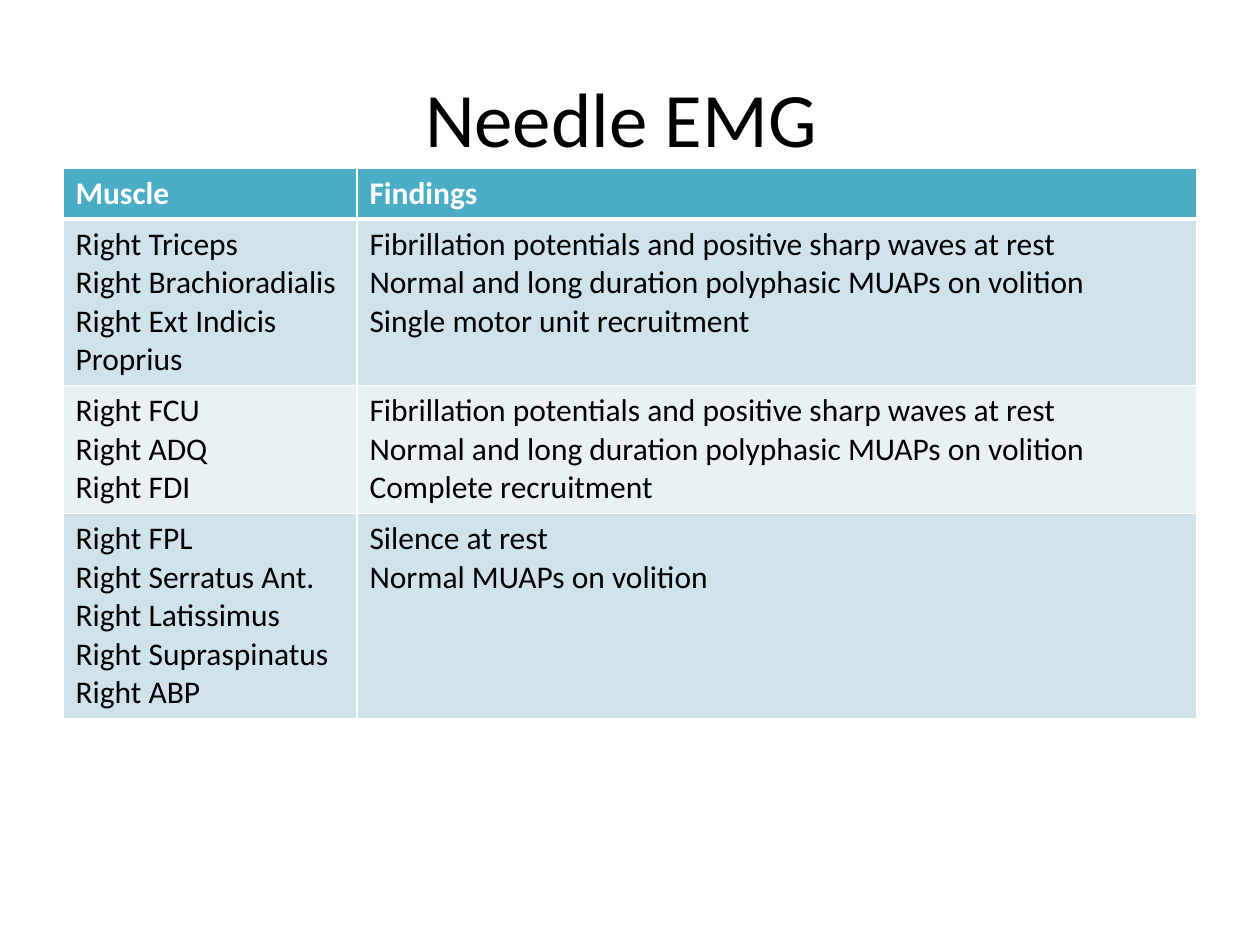
import pptx
import pptx.util
import pptx.dml.color
import pptx.enum.text
import pptx.oxml.ns
import lxml.etree

Pt = pptx.util.Pt
RGB = pptx.dml.color.RGBColor
WHITE = RGB(0xFF, 0xFF, 0xFF)
BLACK = RGB(0x00, 0x00, 0x00)
TEAL = RGB(0x4B, 0xAC, 0xC6)
BANDS = RGB(0xD0, 0xE3, 0xEA), RGB(0xE9, 0xF1, 0xF5)
FONT = "Calibri"

WAVES = "Fibrillation potentials and positive sharp waves at rest"
UNITS = "Normal and long duration polyphasic MUAPs on volition"
ROWS = [
    (["Muscle"], ["Findings"]),
    (["Right Triceps", "Right Brachioradialis", "Right Ext Indicis Proprius"],
     [WAVES, UNITS, "Single motor unit recruitment"]),
    (["Right FCU", "Right ADQ", "Right FDI"],
     [WAVES, UNITS, "Complete recruitment"]),
    (["Right FPL", "Right Serratus Ant.", "Right Latissimus",
      "Right Supraspinatus", "Right ABP"],
     ["Silence at rest", "Normal MUAPs on volition"]),
]
WIDTHS = 168, 480
HEIGHTS = 29.2, 94, 72.6, 115


def style(para, size, color, bold=False):
    font = para.font
    font.name, font.size, font.bold = FONT, Pt(size), bold
    font.color.rgb = color


def add_title(slide, text, left, top, width, height):
    title = slide.shapes.title
    title.left, title.top = Pt(left), Pt(top)
    title.width, title.height = Pt(width), Pt(height)
    frame = title.text_frame
    frame.text = text
    frame.vertical_anchor = pptx.enum.text.MSO_ANCHOR.MIDDLE
    para = frame.paragraphs[0]
    para.alignment = pptx.enum.text.PP_ALIGN.CENTER
    style(para, 44, BLACK)


def set_edges(cell, **edges):
    """Draw white borders, given as side=width in points."""
    props = cell._tc.get_or_add_tcPr()
    qn = pptx.oxml.ns.qn
    for side, width in edges.items():
        line = lxml.etree.SubElement(props, qn(f"a:ln{side}"), w=str(Pt(width)))
        fill = lxml.etree.SubElement(line, qn("a:solidFill"))
        lxml.etree.SubElement(fill, qn("a:srgbClr"), val=str(WHITE))


def fill_cell(cell, lines, row):
    head = row == 0
    set_edges(cell, L=1, R=1, T=3 if row == 1 else 1, B=3 if head else 1)
    cell.fill.solid()
    cell.fill.fore_color.rgb = TEAL if head else BANDS[(row - 1) % 2]
    cell.text = "\n".join(lines)
    for para in cell.text_frame.paragraphs:
        style(para, 18, WHITE if head else BLACK, head)


def add_findings(slide, left, top, width, height):
    table = slide.shapes.add_table(
        len(ROWS), len(WIDTHS), Pt(left), Pt(top), Pt(width), Pt(height)).table
    for col, size in zip(table.columns, WIDTHS):
        col.width = Pt(size)
    for row, (cells, size) in enumerate(zip(ROWS, HEIGHTS)):
        table.rows[row].height = Pt(size)
        for col, lines in enumerate(cells):
            fill_cell(table.cell(row, col), lines, row)


def main():
    deck = pptx.Presentation()
    deck.slide_width, deck.slide_height = Pt(720), Pt(540)
    slide = deck.slides.add_slide(deck.slide_layouts.get_by_name("Title Only"))
    add_title(slide, "Needle EMG ", 36, 21.6, 648, 90)
    add_findings(slide, 36, 96, sum(WIDTHS), sum(HEIGHTS))
    deck.save("out.pptx")


if __name__ == "__main__":
    main()
